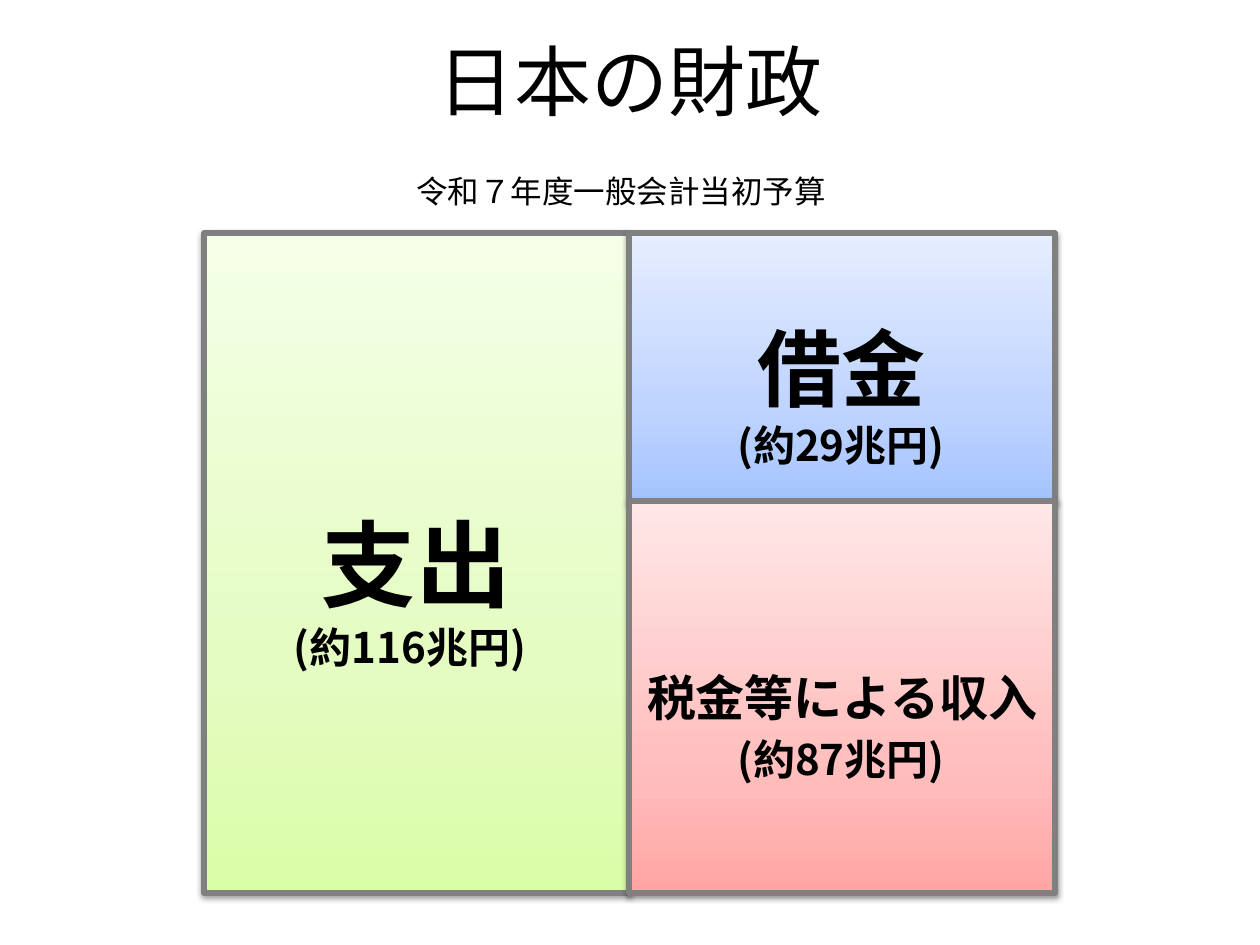
from lxml.etree import SubElement
from copy import deepcopy
from pptx import Presentation
from pptx.dml.color import RGBColor
from pptx.enum.shapes import MSO_SHAPE as Shape
from pptx.enum.text import MSO_ANCHOR as Anchor, MSO_AUTO_SIZE as AutoSize, PP_ALIGN as Align
from pptx.oxml.ns import qn
from pptx.util import Emu, Pt

COLORS = {
    "text": "000000",
    "border": "808080",
    "green": ("DAFDA7", "E4FCC2", "F5FFE7"),
    "blue": ("A4C4FF", "BFD4FF", "E6EEFF"),
    "red": ("FFA6A5", "FFC0BF", "FFE7E7"),
}
STOPS = (0, 0.35, 1)


def px(length):
    return Emu(round(length * 914400 / 126))


class BudgetSlide:
    font = "Noto Sans CJK JP"

    def __init__(self, deck):
        self.page = deck.slides.add_slide(deck.slide_layouts[5])

    def set_text(self, shape, text, size, bold=False, align=Align.CENTER):
        frame = shape.text_frame
        frame.text = text
        para = frame.paragraphs[0]
        para.alignment = align
        span = para.runs[0]
        span.font.name = self.font
        span.font.size = Pt(size)
        span.font.bold = bold
        span.font.color.rgb = RGBColor.from_string(COLORS["text"])
        # East Asian glyphs take their own font setting
        SubElement(span.font._element, qn("a:ea"), typeface=self.font)

    def title(self, text, *area):
        box = self.page.shapes.title
        box.left, box.top, box.width, box.height = map(px, area)
        box.text_frame.vertical_anchor = Anchor.MIDDLE
        self.set_text(box, text, 44)

    def label(self, text, size, *area, **style):
        box = self.page.shapes.add_textbox(*map(px, area))
        box.text_frame.word_wrap = True
        box.text_frame.auto_size = AutoSize.SHAPE_TO_FIT_TEXT
        self.set_text(box, text, size, **style)

    def block(self, text, size, color, *area):
        box = self.page.shapes.add_shape(Shape.RECTANGLE, *map(px, area))
        box.text_frame.vertical_anchor = Anchor.MIDDLE
        self.gradient(box, COLORS[color])
        box.line.color.rgb = RGBColor.from_string(COLORS["border"])
        box.line.width = Pt(3)
        self.shadow(box)
        self.set_text(box, text, size, bold=True)

    def gradient(self, box, colors):
        box.fill.gradient()
        box.fill.gradient_angle = 90
        # The default gradient has two stops; add the third
        stop_list = box._element.spPr.find(qn("a:gradFill")).find(qn("a:gsLst"))
        stop_list.append(deepcopy(stop_list[-1]))
        for stop, position, color in zip(box.fill.gradient_stops, STOPS, colors):
            stop.position = position
            stop.color.rgb = RGBColor.from_string(color)

    def shadow(self, box):
        box.shadow.inherit = False
        effects = box._element.spPr.find(qn("a:effectLst"))
        outer = SubElement(effects, qn("a:outerShdw"), blurRad="40000",
                           dist="20000", dir="5400000", rotWithShape="0")
        tint = SubElement(outer, qn("a:srgbClr"), val="000000")
        SubElement(tint, qn("a:alpha"), val="38000")


def main():
    deck = Presentation()
    deck.slide_width, deck.slide_height = px(1260), px(945)
    slide = BudgetSlide(deck)

    # Headings
    slide.title("日本の財政", 0, 0, 1260, 160)
    slide.label("令和７年度一般会計当初予算", 18, 404, 166, 455, 50, align=Align.LEFT)

    # Spending on the left, its two sources stacked on the right
    left, middle, right = 204, 629, 1055
    top, split, bottom = 233, 501, 893
    blocks = [
        ("支出", 54, "green", left, top, middle, bottom),
        ("借金", 48, "blue", middle, top, right, split),
        ("税金等による収入", 28, "red", middle, split, right, bottom),
    ]
    for text, size, color, x1, y1, x2, y2 in blocks:
        slide.block(text, size, color, x1, y1, x2 - x1, y2 - y1)

    # Amounts below the block names
    amounts = [
        ("(約116兆円)", 243, 615, 334),
        ("(約29兆円)", 669, 413, 344),
        ("(約87兆円)", 669, 727, 344),
    ]
    for text, x, y, width in amounts:
        slide.label(text, 24, x, y, width, 63, bold=True)

    deck.save("out.pptx")


if __name__ == "__main__":
    main()
